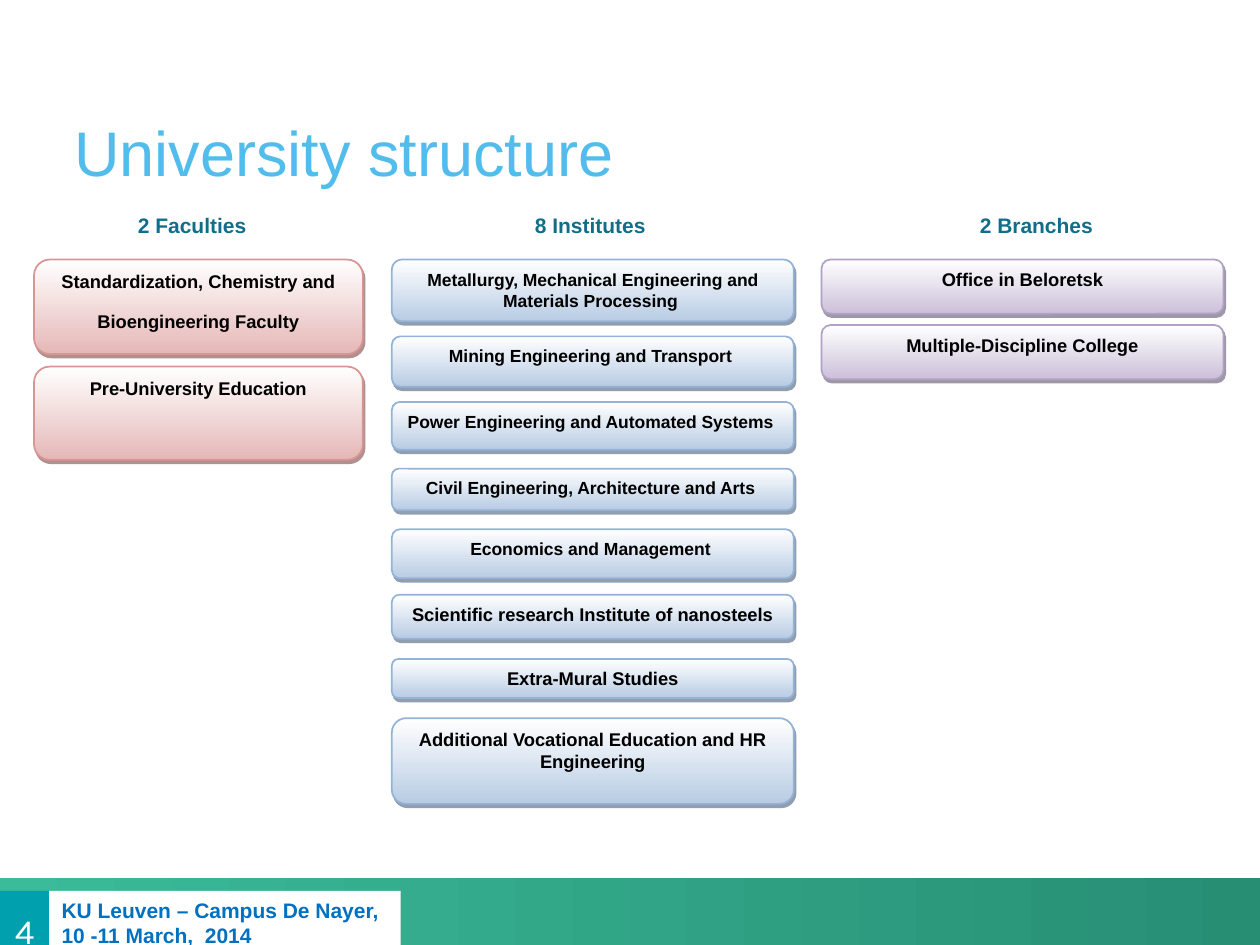
from dataclasses import dataclass

from lxml import etree
from pptx import Presentation
from pptx.dml.color import RGBColor
from pptx.enum import shapes, text
from pptx.oxml import ns
from pptx.util import Inches, Pt


@dataclass(frozen=True)
class Theme:
    font: str = "Arial"
    number_font: str = "Karla"
    title: str = "52BDEC"
    heading: str = "116E8A"
    event: str = "0070C0"
    number_fill: str = "00A0AE"
    band: tuple = ("3BBB99", "278E74")
    white: str = "FFFFFF"
    black: str = "000000"
    # fill end, outline, shadow
    red: tuple = ("E5B8B7", "D99594", "622423")
    blue: tuple = ("B8CCE4", "95B3D7", "243F60")
    purple: tuple = ("CCC0D9", "B2A1C7", "3F3151")
    title_size: float = 36
    number_size: float = 20
    heading_size: float = 12
    card_size: float = 10.5
    small_card_size: float = 10


THEME = Theme()
rgb = RGBColor.from_string

prs = Presentation()
prs.slide_width, prs.slide_height = Inches(10), Inches(7.5)
slide = prs.slides.add_slide(prs.slide_layouts[6])


def add_box(kind, place, fill, line=None, angle=0):
    """Add a shape; fill is one colour or a pair of gradient ends."""
    box = slide.shapes.add_shape(kind, *map(Inches, place))
    box.shadow.inherit = False
    if isinstance(fill, tuple):
        box.fill.gradient()
        box.fill.gradient_angle = angle
        for position, (stop, color) in enumerate(zip(box.fill.gradient_stops, fill)):
            stop.color.rgb = rgb(color)
            stop.position = position
    else:
        box.fill.solid()
        box.fill.fore_color.rgb = rgb(fill)
    if line:
        box.line.color.rgb = rgb(line)
    else:
        box.line.fill.background()
    return box


def write(box, lines, size, color, bold=True, align=text.PP_ALIGN.CENTER,
          after=0, font=THEME.font, anchor=text.MSO_ANCHOR.TOP):
    """Write one paragraph per line; a newline inside becomes a line break."""
    frame = box.text_frame
    frame.word_wrap = True
    frame.vertical_anchor = anchor
    for i, line in enumerate(lines):
        paragraph = frame.paragraphs[0] if i == 0 else frame.add_paragraph()
        paragraph.alignment = align
        paragraph.space_after = Pt(after)
        for j, part in enumerate(line.split("\n")):
            if j:
                paragraph.add_line_break()
            run = paragraph.add_run()
            run.text = part
            run.font.name = font
            run.font.size = Pt(size)
            run.font.bold = bold
            run.font.color.rgb = rgb(color)
    return frame


# Footer
RECT = shapes.MSO_SHAPE.RECTANGLE
add_box(RECT, (0, 6.97, 10, 0.6), THEME.band)
page_number = add_box(RECT, (0, 7.07, 0.39, 0.51), THEME.number_fill)
number_frame = write(page_number, ["4"], THEME.number_size, THEME.white, bold=False,
                     font=THEME.number_font, anchor=text.MSO_ANCHOR.MIDDLE)
number_frame.margin_left = number_frame.margin_right = number_frame.margin_bottom = 0
number_frame.margin_top = Inches(0.12)
number_frame.word_wrap = False
event = add_box(RECT, (0.39, 7.07, 2.79, 0.51), THEME.white)
event_frame = write(event, ["KU Leuven – Campus De Nayer, \n10 -11 March,  2014"],
                    THEME.heading_size, THEME.event, align=text.PP_ALIGN.LEFT)
event_frame.word_wrap = False

# Title
title = slide.shapes.add_textbox(*map(Inches, (0.59, 0.52, 9.11, 0.98)))
title_frame = write(title, ["University structure"], THEME.title_size, THEME.title, bold=False,
                    align=text.PP_ALIGN.LEFT, anchor=text.MSO_ANCHOR.BOTTOM)
title_frame.margin_left = title_frame.margin_right = 0
title_frame.margin_top = title_frame.margin_bottom = 0

# Columns: heading, heading left, card left, card width, colours,
# and cards as top, height, size, paragraphs
NORMAL, SMALL = THEME.card_size, THEME.small_card_size
columns = [
    ("2 Faculties", 0.27, 0.27, 2.61, THEME.red, [
        (2.06, 0.75, NORMAL, ["Standardization, Chemistry and", "Bioengineering Faculty"]),
        (2.91, 0.74, NORMAL, ["Pre-University Education"]),
    ]),
    ("8 Institutes", 3.43, 3.11, 3.19, THEME.blue, [
        (2.06, 0.49, SMALL, ["Metallurgy, Mechanical Engineering and Materials Processing "]),
        (2.67, 0.40, SMALL, ["Mining Engineering and Transport "]),
        (3.19, 0.38, SMALL, ["Power Engineering and Automated Systems "]),
        (3.72, 0.33, SMALL, ["Civil Engineering, Architecture and Arts "]),
        (4.20, 0.39, SMALL, ["Economics and Management "]),
        (4.72, 0.35, NORMAL, ["Scientific research Institute of nanosteels"]),
        (5.23, 0.31, NORMAL, ["Extra-Mural Studies"]),
        (5.70, 0.68, NORMAL, ["Additional Vocational Education and HR Engineering"]),
    ]),
    ("2 Branches", 6.97, 6.52, 3.19, THEME.purple, [
        (2.06, 0.43, NORMAL, ["Office in Beloretsk"]),
        (2.58, 0.43, NORMAL, ["Multiple-Discipline College"]),
    ]),
]

for heading, heading_left, left, width, (tint, outline, shade), cards in columns:
    label = add_box(RECT, (heading_left, 1.64, 2.51, 0.42), THEME.white, THEME.white)
    label.line.width = Pt(0.75)
    write(label, [heading], THEME.heading_size, THEME.heading, after=10)
    for top, height, size, lines in cards:
        card = add_box(shapes.MSO_SHAPE.ROUNDED_RECTANGLE, (left, top, width, height),
                       (THEME.white, tint), outline, angle=270)
        card.line.width = Pt(1)
        write(card, lines, size, THEME.black, after=10)
        effects = card.element.spPr.find(ns.qn("a:effectLst"))
        shadow = etree.SubElement(effects, ns.qn("a:outerShdw"), blurRad="0",
                                  dist=str(Pt(2.2)), dir=str(63 * 60000),
                                  algn="ctr", rotWithShape="0")
        shadow_color = etree.SubElement(shadow, ns.qn("a:srgbClr"), val=shade)
        etree.SubElement(shadow_color, ns.qn("a:alpha"), val="50000")

prs.save("out.pptx")
